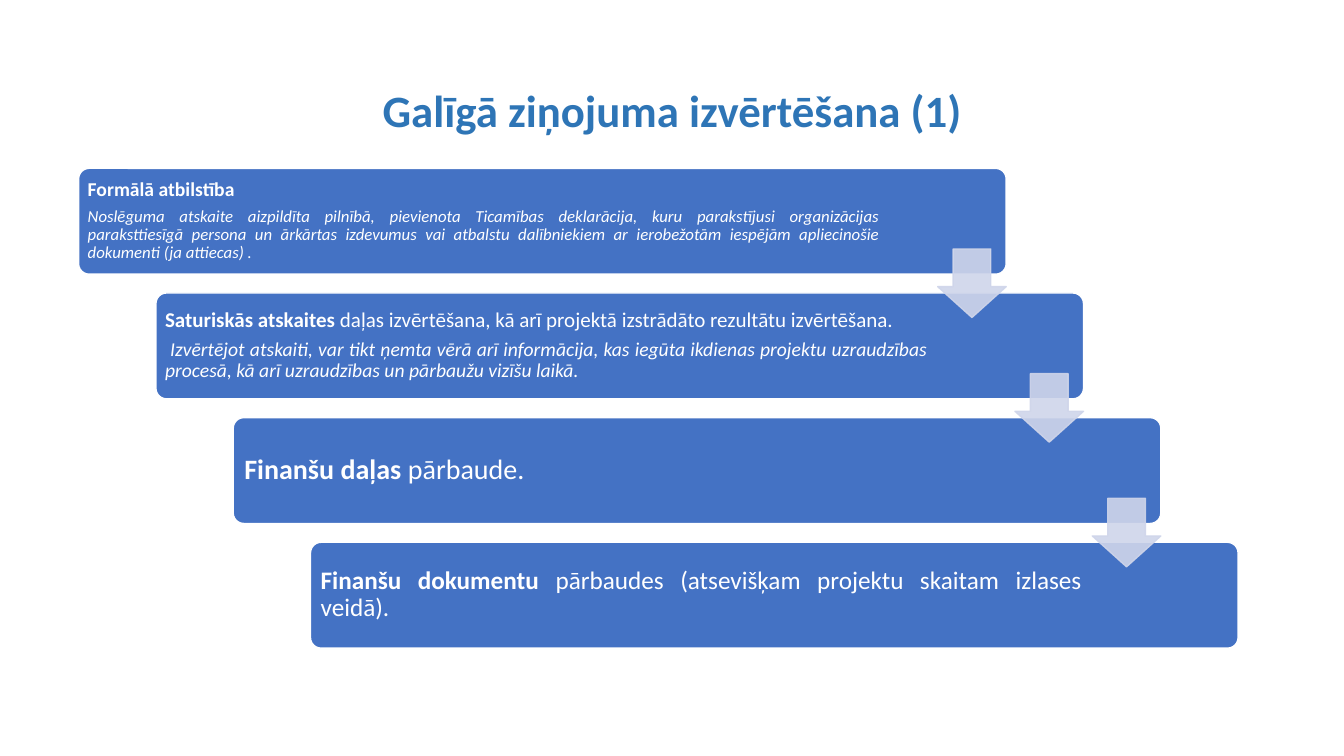
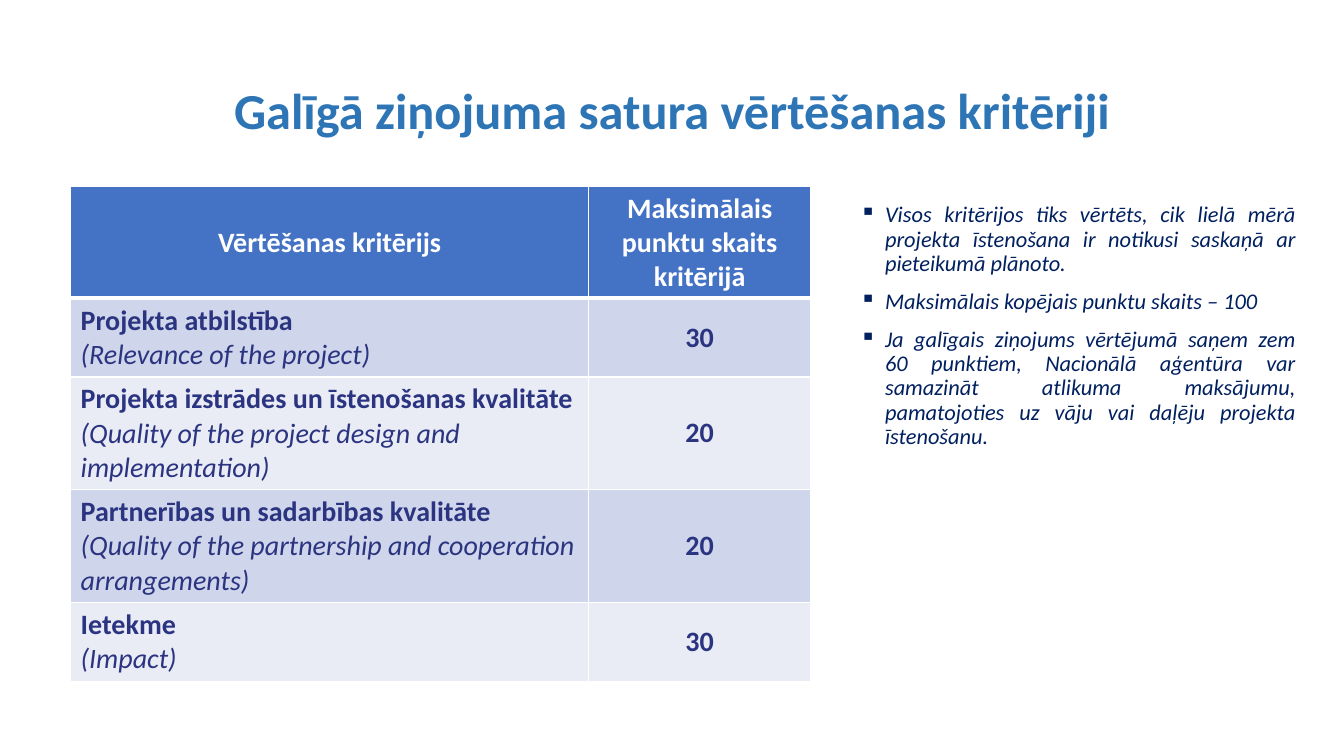
from dataclasses import dataclass

from lxml.etree import SubElement
from pptx import Presentation
from pptx.dml.color import RGBColor
from pptx.enum.shapes import MSO_SHAPE
from pptx.enum.text import MSO_ANCHOR, PP_ALIGN
from pptx.oxml.ns import qn
from pptx.util import Inches, Pt


@dataclass(frozen=True)
class Theme:
    font: str = "Calibri"
    title: str = "2E75B6"
    bar: str = "4472C4"
    pale: str = "CFD5EA"
    paler: str = "E9EBF5"
    white: str = "FFFFFF"
    note: str = "002060"
    cell: str = "2B3480"
    step_title_size: int = 32
    table_title_size: int = 36
    note_size: int = 16
    cell_size: int = 20


THEME = Theme()

STEP_TITLE = "Galīgā ziņojuma izvērtēšana (1)"
# Each paragraph is (size, spans); each span is (text, style).
STEPS = [
    dict(align=PP_ALIGN.JUSTIFY, text_width=7.98, padding=0.06, paragraphs=[
        (14, [("Formālā atbilstība", "bold")]),
        (12, [("Noslēguma atskaite aizpildīta pilnībā, pievienota Ticamības deklarācija, "
               "kuru parakstījusi organizācijas paraksttiesīgā persona un ārkārtas izdevumus "
               "vai atbalstu dalībniekiem ar ierobežotām iespējām apliecinošie dokumenti "
               "(ja attiecas) .", "italic")]),
    ]),
    dict(align=PP_ALIGN.JUSTIFY, text_width=7.69, padding=0.06, paragraphs=[
        (15, [("Saturiskās atskaites ", "bold"),
              ("daļas izvērtēšana, kā arī projektā izstrādāto rezultātu izvērtēšana.", "plain")]),
        (14, [(" Izvērtējot atskaiti, var tikt ņemta vērā arī informācija, kas iegūta ikdienas "
               "projektu uzraudzības procesā, kā arī uzraudzības un pārbaužu vizīšu laikā.",
               "italic")]),
    ]),
    dict(align=PP_ALIGN.LEFT, text_width=7.69, padding=0.08, paragraphs=[
        (20, [("Finanšu daļas ", "bold"), ("pārbaude.", "plain")]),
    ]),
    dict(align=PP_ALIGN.JUSTIFY, text_width=7.69, padding=0.07, paragraphs=[
        (18, [("Finanšu dokumentu ", "bold"),
              ("pārbaudes (atsevišķam projektu skaitam izlases veidā).", "plain")]),
    ]),
]

TABLE_TITLE = "Galīgā ziņojuma satura vērtēšanas kritēriji"
TABLE_HEADER = ("Vērtēšanas kritērijs", "Maksimālais punktu skaits kritērijā")
CRITERIA = [
    ("Projekta atbilstība", "(Relevance of the project)", 30),
    ("Projekta izstrādes un īstenošanas kvalitāte",
     "(Quality of the project design and implementation)", 20),
    ("Partnerības un sadarbības kvalitāte",
     "(Quality of the partnership and cooperation arrangements)", 20),
    ("Ietekme", "(Impact)", 30),
]
COLUMN_WIDTHS = (5.14, 2.2)
ROW_HEIGHTS = (1.11, 0.78, 1.12, 1.12, 0.78)
NOTES = [
    "Visos kritērijos tiks vērtēts, cik lielā mērā projekta īstenošana ir notikusi saskaņā "
    "ar pieteikumā plānoto.",
    "Maksimālais kopējais punktu skaits – 100",
    "Ja galīgais ziņojums vērtējumā saņem zem 60 punktiem, Nacionālā aģentūra var samazināt "
    "atlikuma maksājumu, pamatojoties uz vāju vai daļēju projekta īstenošanu.",
]

BAR_WIDTH, BAR_HEIGHT = 9.2, 1.05
FIRST_BAR, LAST_BAR = (0.78, 1.67), (3.08, 5.38)
CORNER_INSET = 0.03
ARROW_SIZE, ARROW_DROP = 0.68, 0.8


def rgb(color):
    return RGBColor.from_string(color)


def write(para, spans, size, color, align=PP_ALIGN.LEFT, spacing=None):
    para.alignment = align
    para.line_spacing = spacing
    para.font.name = THEME.font
    para.font.size = Pt(size)
    para.font.color.rgb = rgb(color)
    for text, style in spans:
        span = para.add_run()
        span.text = text
        span.font.bold = style == "bold"
        span.font.italic = style == "italic"


def paragraphs_for(frame, items):
    """Yield a paragraph of the frame with each item, reusing the first one."""
    for index, item in enumerate(items):
        yield (frame.add_paragraph() if index else frame.paragraphs[0]), item


def add_text_box(page, left, top, width, height, anchor=MSO_ANCHOR.TOP):
    box = page.shapes.add_textbox(Inches(left), Inches(top), Inches(width), Inches(height))
    box.text_frame.word_wrap = True
    box.text_frame.vertical_anchor = anchor
    return box.text_frame


def add_page(deck, title, size):
    page = deck.slides.add_slide(deck.slide_layouts[6])
    frame = add_text_box(page, 0.92, 0.4, 11.5, 1.45, MSO_ANCHOR.MIDDLE)
    write(frame.paragraphs[0], [(title, "bold")], size, THEME.title, PP_ALIGN.CENTER, 0.9)
    return page


def add_filled_shape(page, kind, left, top, width, height, fill, line, adjustments):
    shape = page.shapes.add_shape(kind, Inches(left), Inches(top), Inches(width), Inches(height))
    shape.shadow.inherit = False
    for index, value in enumerate(adjustments):
        shape.adjustments[index] = value
    shape.fill.solid()
    shape.fill.fore_color.rgb = rgb(fill)
    shape.line.color.rgb = rgb(line)
    shape.line.width = Pt(1)
    return shape


def add_step(page, left, top, step):
    bar = add_filled_shape(page, MSO_SHAPE.ROUNDED_RECTANGLE, left, top, BAR_WIDTH, BAR_HEIGHT,
                           THEME.bar, THEME.white, [0.1])
    frame, padding = bar.text_frame, step["padding"]
    frame.word_wrap = True
    frame.vertical_anchor = MSO_ANCHOR.MIDDLE
    frame.margin_left = frame.margin_top = frame.margin_bottom = Inches(padding)
    frame.margin_right = Inches(BAR_WIDTH - 2 * CORNER_INSET - step["text_width"] + padding)
    for para, (size, spans) in paragraphs_for(frame, step["paragraphs"]):
        write(para, spans, size, THEME.white, step["align"], 0.9)
        para.space_after = Pt(round(0.35 * size))


def add_step_arrow(page, bar_left, bar_top):
    arrow = add_filled_shape(page, MSO_SHAPE.DOWN_ARROW, bar_left + BAR_WIDTH - ARROW_SIZE,
                             bar_top + ARROW_DROP, ARROW_SIZE, ARROW_SIZE,
                             THEME.pale, THEME.pale, [0.55, 0.45])
    for color in arrow._element.spPr.iter(qn("a:srgbClr")):
        SubElement(color, qn("a:alpha"), val="90000")


def build_steps_page(deck):
    page = add_page(deck, STEP_TITLE, THEME.step_title_size)
    gaps = len(STEPS) - 1
    corners = [tuple(first + (last - first) * index / gaps
                     for first, last in zip(FIRST_BAR, LAST_BAR))
               for index in range(len(STEPS))]
    for corner, step in zip(corners, STEPS):
        add_step(page, *corner, step)
    for corner in corners[:-1]:
        add_step_arrow(page, *corner)


def style_cell(cell, row, fill):
    """Give the cell white borders, thicker under the header, and a fill."""
    properties = cell._tc.get_or_add_tcPr()
    widths = {"lnL": 1, "lnR": 1, "lnT": 3 if row == 1 else 1, "lnB": 3 if row == 0 else 1}
    for side, width in widths.items():
        line = SubElement(properties, qn(f"a:{side}"), w=str(Pt(width)))
        SubElement(SubElement(line, qn("a:solidFill")), qn("a:srgbClr"), val=THEME.white)
    cell.fill.solid()
    cell.fill.fore_color.rgb = rgb(fill)
    cell.vertical_anchor = MSO_ANCHOR.MIDDLE


def add_criteria_table(page):
    rows = [[[(text, "bold")] for text in TABLE_HEADER]]
    rows += [[[(name, "bold"), (english, "italic")], [(str(points), "bold")]]
             for name, english, points in CRITERIA]
    table = page.shapes.add_table(len(rows), len(COLUMN_WIDTHS), Inches(0.7), Inches(1.85),
                                  Inches(sum(COLUMN_WIDTHS)), Inches(sum(ROW_HEIGHTS))).table
    table.horz_banding = False
    for column, width in zip(table.columns, COLUMN_WIDTHS):
        column.width = Inches(width)
    for row, cells in enumerate(rows):
        table.rows[row].height = Inches(ROW_HEIGHTS[row])
        fill = THEME.bar if row == 0 else (THEME.paler, THEME.pale)[row % 2]
        color = THEME.white if row == 0 else THEME.cell
        for column, lines in enumerate(cells):
            cell = table.cell(row, column)
            style_cell(cell, row, fill)
            align = PP_ALIGN.CENTER if row == 0 or column == 1 else PP_ALIGN.LEFT
            for para, line in paragraphs_for(cell.text_frame, lines):
                write(para, [line], THEME.cell_size, color, align)


def add_notes_list(page):
    frame = add_text_box(page, 8.43, 1.97, 4.52, 4.72)
    for index, (para, note) in enumerate(paragraphs_for(frame, NOTES)):
        if index:
            para.space_before = Pt(10)
        properties = para._p.get_or_add_pPr()
        properties.set("marL", str(Inches(0.25)))
        properties.set("indent", str(Inches(-0.25)))
        SubElement(properties, qn("a:buChar"), char="▪")
        write(para, [(note, "italic")], THEME.note_size, THEME.note, PP_ALIGN.JUSTIFY, 0.9)


def build_criteria_page(deck):
    page = add_page(deck, TABLE_TITLE, THEME.table_title_size)
    add_notes_list(page)
    add_criteria_table(page)


def main():
    deck = Presentation()
    deck.slide_width, deck.slide_height = Inches(13.33), Inches(7.5)
    build_steps_page(deck)
    build_criteria_page(deck)
    deck.save("out.pptx")


if __name__ == "__main__":
    main()
